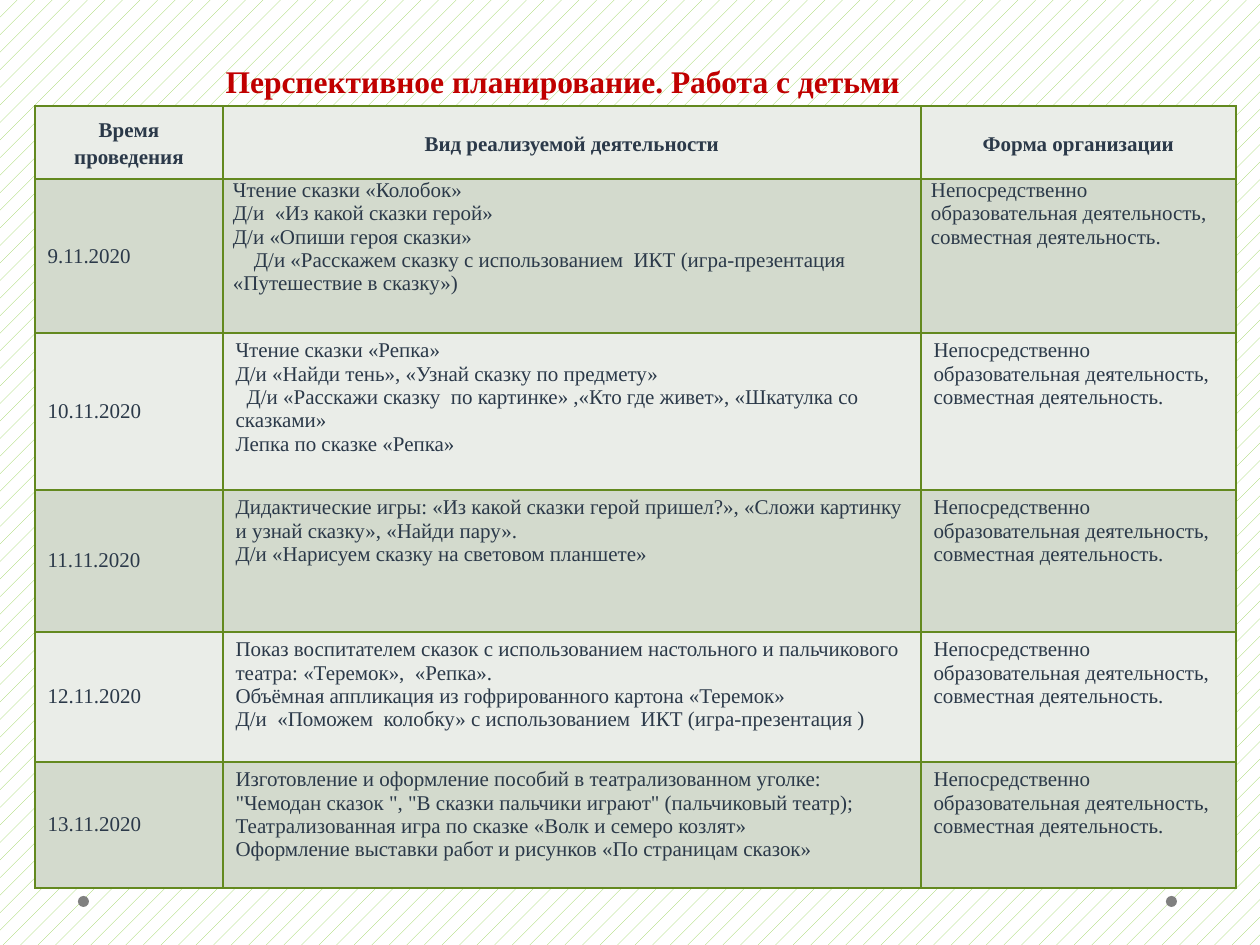
from lxml import etree
from pptx import Presentation
from pptx.dml.color import RGBColor
from pptx.enum.dml import MSO_PATTERN
from pptx.enum.shapes import MSO_SHAPE
from pptx.enum.text import MSO_ANCHOR, MSO_AUTO_SIZE, PP_ALIGN
from pptx.oxml.ns import qn
from pptx.util import Pt

OVAL = MSO_SHAPE.OVAL
TOP, MIDDLE = MSO_ANCHOR.TOP, MSO_ANCHOR.MIDDLE
LEFT, CENTER = PP_ALIGN.LEFT, PP_ALIGN.CENTER
DOTS = MSO_PATTERN.PERCENT_5
GROW = MSO_AUTO_SIZE.SHAPE_TO_FIT_TEXT
SCALE = 914400 / 126

FORM = "Непосредственно образовательная деятельность, совместная деятельность."
HEADS = ["Время проведения", "Вид реализуемой деятельности", "Форма организации"]
PLAN = [
    ("9.11.2020", [
        "Чтение сказки «Колобок»",
        "Д/и  «Из какой сказки герой»",
        "Д/и «Опиши героя сказки»",
        (21, "Д/и «Расскажем сказку с использованием  ИКТ "
             "(игра-презентация «Путешествие в сказку»)"),
    ]),
    ("10.11.2020", [
        "Чтение сказки «Репка»",
        "Д/и «Найди тень», «Узнай сказку по предмету»",
        (11, "Д/и «Расскажи сказку  по картинке» ,«Кто где живет», "
             "«Шкатулка со сказками»"),
        "Лепка по сказке «Репка»",
    ]),
    ("11.11.2020", [
        "Дидактические игры: «Из какой сказки герой пришел?», "
        "«Сложи картинку и узнай сказку», «Найди пару».",
        "Д/и «Нарисуем сказку на световом планшете»",
    ]),
    ("12.11.2020", [
        "Показ воспитателем сказок с использованием настольного и "
        "пальчикового театра: «Теремок»,  «Репка».",
        "Объёмная аппликация из гофрированного картона «Теремок»",
        "Д/и  «Поможем  колобку» с использованием  ИКТ (игра-презентация )",
    ]),
    ("13.11.2020", [
        "Изготовление и оформление пособий в театрализованном уголке: "
        "\"Чемодан сказок \", \"В сказки пальчики играют\" (пальчиковый театр);",
        "Театрализованная игра по сказке «Волк и семеро козлят»",
        "Оформление выставки работ и рисунков «По страницам сказок»",
    ]),
]
COLS = [188, 698, 315]
ROWS = [73, 154, 157, 142, 130, 126]


def px(size):
    return round(size * SCALE)


def tint(code):
    return RGBColor.from_string(code)


class Page:
    face = "Times New Roman"
    ink, edge, red, gray = "2B3949", "63891F", "C00000", "808080"
    bands = ["EAEDE8", "D3DACD"]

    def __init__(self, slide):
        self.slide = slide

    def back(self):
        fill = self.slide.background.fill
        fill.patterned()
        fill.pattern = DOTS
        fill.fore_color.rgb = tint("92D050")
        fill.back_color.rgb = tint("FFFFFF")

    def style(self, par, size, color, bold=False):
        font = par.font
        font.name, font.size, font.bold = self.face, Pt(size), bold
        font.color.rgb = tint(color)

    def title(self, text, left, top, width, height):
        shape = self.slide.shapes.title
        shape.left, shape.top = px(left), px(top)
        shape.width, shape.height = px(width), px(height)
        frame = shape.text_frame
        frame.text = text
        frame.word_wrap = True
        frame.auto_size = GROW
        frame.vertical_anchor = TOP
        par = frame.paragraphs[0]
        par.alignment, par.line_spacing = LEFT, 1.5
        self.style(par, 18, self.red, True)

    def dot(self, left, top, size):
        shape = self.slide.shapes.add_shape(OVAL, px(left), px(top), px(size), px(size))
        shape.shadow.inherit = False
        shape.fill.solid()
        shape.fill.fore_color.rgb = tint(self.gray)
        shape.line.fill.background()

    def border(self, cell):
        props = cell._tc.get_or_add_tcPr()
        for side in ("a:lnL", "a:lnR", "a:lnT", "a:lnB"):
            line = etree.SubElement(props, qn(side), w=str(Pt(1)))
            fill = etree.SubElement(line, qn("a:solidFill"))
            etree.SubElement(fill, qn("a:srgbClr"), val=self.edge)

    def cell(self, cell, lines, band, head=False, tight=False, mid=False):
        self.border(cell)
        cell.fill.solid()
        cell.fill.fore_color.rgb = tint(self.bands[band])
        cell.vertical_anchor = MIDDLE if mid else TOP
        if tight:
            cell.margin_left = cell.margin_right = px(10)
            cell.margin_top = cell.margin_bottom = 0
        frame = cell.text_frame
        for i, line in enumerate(lines):
            par = frame.add_paragraph() if i else frame.paragraphs[0]
            indent, text = line if isinstance(line, tuple) else (0, line)
            par.text = text
            if indent:
                par._p.get_or_add_pPr().set("indent", str(px(indent)))
            self.style(par, 12, self.ink, head)
            if head:
                par.alignment, par.line_spacing = CENTER, 1.15
                par.space_after = Pt(7.5)

    def table(self, left, top):
        grid = self.slide.shapes.add_table(
            len(ROWS), len(COLS), px(left), px(top), px(sum(COLS)), px(sum(ROWS))
        ).table
        grid.first_row = grid.horz_banding = False
        for col, width in zip(grid.columns, COLS):
            col.width = px(width)
        for row, height in zip(grid.rows, ROWS):
            row.height = px(height)
        for c, text in enumerate(HEADS):
            self.cell(grid.cell(0, c), [text], 0, head=True, tight=True, mid=True)
        for r, (date, tasks) in enumerate(PLAN, 1):
            for c, lines in enumerate(([date], tasks, [FORM])):
                self.cell(grid.cell(r, c), lines, r % 2,
                          tight=r == 1 and c > 0, mid=c == 0)


def main():
    deck = Presentation()
    deck.slide_width, deck.slide_height = px(1260), px(945)
    page = Page(deck.slides.add_slide(deck.slide_layouts[5]))
    page.back()
    for left in (1166, 78):
        page.dot(left, 896, 11)
    page.title("Перспективное планирование. Работа с детьми", 213, 37, 953, 70)
    page.table(35, 106)
    deck.save("out.pptx")


if __name__ == "__main__":
    main()
